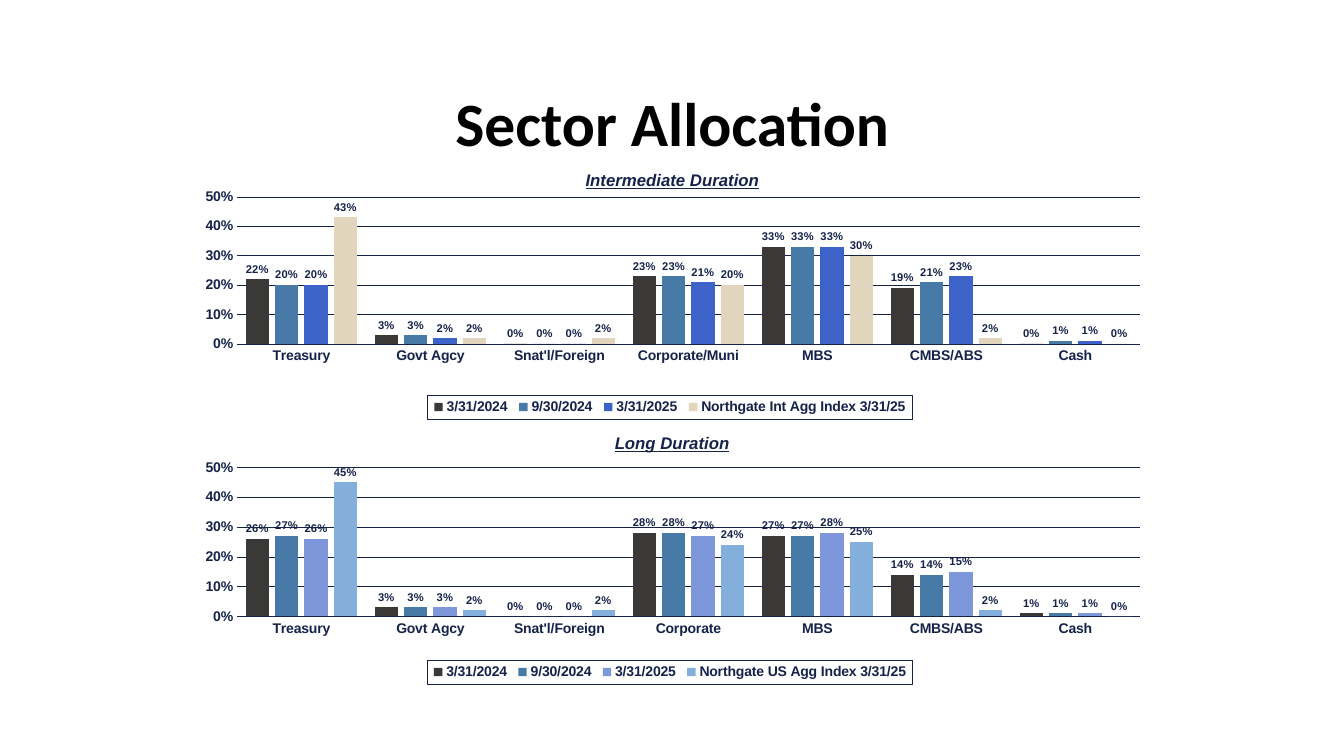
from lxml import etree
from pptx import Presentation
from pptx.chart.data import CategoryChartData
from pptx.dml.color import RGBColor
from pptx.enum.chart import XL_CHART_TYPE, XL_LABEL_POSITION, XL_LEGEND_POSITION, XL_TICK_MARK
from pptx.enum.text import MSO_ANCHOR, PP_ALIGN
from pptx.oxml import parse_xml
from pptx.oxml.ns import nsdecls, qn
from pptx.util import Inches, Pt

COLUMNS = XL_CHART_TYPE.COLUMN_CLUSTERED
OUTSIDE_END = XL_LABEL_POSITION.OUTSIDE_END
BOTTOM = XL_LEGEND_POSITION.BOTTOM
NO_TICKS = XL_TICK_MARK.NONE
MIDDLE = MSO_ANCHOR.MIDDLE
CENTER = PP_ALIGN.CENTER

BLACK = RGBColor(0x00, 0x00, 0x00)
NAVY = RGBColor(0x15, 0x23, 0x4A)
CHARCOAL = RGBColor(0x3B, 0x38, 0x38)
STEEL = RGBColor(0x48, 0x7A, 0xA8)
ROYAL = RGBColor(0x3D, 0x62, 0xC8)
SAND = RGBColor(0xE1, 0xD6, 0xBD)
PERIWINKLE = RGBColor(0x7E, 0x96, 0xDA)
SKY = RGBColor(0x84, 0xAE, 0xDC)

INTERMEDIATE = {
    "title": "Intermediate Duration",
    "title_at": (0.41, 0.06),
    "plot_top": 0.17,
    "sectors": ["Treasury", "Govt Agcy", "Snat'l/Foreign", "Corporate/Muni", "MBS", "CMBS/ABS", "Cash"],
    "holdings": [
        ("3/31/2024", CHARCOAL, (0.22, 0.03, 0, 0.23, 0.33, 0.19, 0)),
        ("9/30/2024", STEEL, (0.2, 0.03, 0, 0.23, 0.33, 0.21, 0.01)),
        ("3/31/2025", ROYAL, (0.2, 0.02, 0, 0.21, 0.33, 0.23, 0.01)),
        ("Northgate Int Agg Index 3/31/25", SAND, (0.43, 0.02, 0.02, 0.2, 0.3, 0.02, 0)),
    ],
}
LONG = {
    "title": "Long Duration",
    "title_at": (0.44, 0.06),
    "plot_top": 0.2,
    "sectors": ["Treasury", "Govt Agcy", "Snat'l/Foreign", "Corporate", "MBS", "CMBS/ABS", "Cash"],
    "holdings": [
        ("3/31/2024", CHARCOAL, (0.26, 0.03, 0, 0.28, 0.27, 0.14, 0.01)),
        ("9/30/2024", STEEL, (0.27, 0.03, 0, 0.28, 0.27, 0.14, 0.01)),
        ("3/31/2025", PERIWINKLE, (0.26, 0.03, 0, 0.27, 0.28, 0.15, 0.01)),
        ("Northgate US Agg Index 3/31/25", SKY, (0.45, 0.02, 0.02, 0.24, 0.25, 0.02, 0)),
    ],
}


def style_font(font, size, color=NAVY, name="Arial"):
    """Apply the bold text style used across the slide."""
    font.size, font.name, font.bold = Pt(size), name, True
    font.color.rgb = color


def place_part(part, index, inner=False, **fractions):
    """Give a chart part a fixed place as fractions of the chart."""
    for old_layout in part.findall(qn("c:layout")):
        part.remove(old_layout)
    layout = etree.Element(qn("c:layout"))
    manual = etree.SubElement(layout, qn("c:manualLayout"))
    settings = {"layoutTarget": "inner"} if inner else {}
    settings.update(xMode="edge", yMode="edge", **fractions)
    for tag, value in settings.items():
        etree.SubElement(manual, qn(f"c:{tag}")).set("val", str(value))
    part.insert(index, layout)


def add_heading(slide, left, top, width, height):
    """Add the slide heading."""
    frame = slide.shapes.add_textbox(left, top, width, height).text_frame
    frame.word_wrap = True
    frame.vertical_anchor = MIDDLE
    heading = frame.paragraphs[0]
    heading.text = "Sector Allocation"
    heading.alignment = CENTER
    heading.line_spacing = 0.9
    style_font(heading.font, 44, BLACK, "Calibri")


def style_title(chart, allocation):
    """Write and place the chart title."""
    chart.has_title = True
    title = chart.chart_title
    title.include_in_layout = False
    paragraph = title.text_frame.paragraphs[0]
    paragraph.text = allocation["title"]
    style_font(paragraph.font, 12)
    paragraph.font.italic = paragraph.font.underline = True
    x, y = allocation["title_at"]
    place_part(title._element, 1, x=x, y=y)


def style_axes(chart):
    """Format both axes and the gridlines."""
    sector_axis, share_axis = chart.category_axis, chart.value_axis
    for axis in (sector_axis, share_axis):
        axis.major_tick_mark = axis.minor_tick_mark = NO_TICKS
        style_font(axis.tick_labels.font, 10)
    share_axis.minimum_scale, share_axis.maximum_scale = 0, 0.5
    share_axis.major_unit = 0.1
    share_axis.tick_labels.number_format = "0%"
    share_axis.tick_labels.number_format_is_linked = False
    share_axis.format.line.fill.background()
    for line in (sector_axis.format.line, share_axis.major_gridlines.format.line):
        line.color.rgb = NAVY
        line.width = Pt(0.25)


def style_legend(chart):
    """Place the framed legend at the foot of the chart."""
    chart.has_legend = True
    legend = chart.legend
    legend.position = BOTTOM
    legend.include_in_layout = False
    style_font(legend.font, 10)
    place_part(legend._element, 1, x=0.25, y=0.91, w=0.5, h=0.09)
    frame = parse_xml(
        f'<c:spPr {nsdecls("c", "a")}><a:noFill/><a:ln w="3175"><a:solidFill>'
        f'<a:srgbClr val="{NAVY}"/></a:solidFill></a:ln></c:spPr>'
    )
    legend._element.find(qn("c:txPr")).addprevious(frame)


def style_columns(chart, holdings):
    """Colour the columns and label them with their shares."""
    plot = chart.plots[0]
    plot.gap_width, plot.overlap = 75, -25
    plot.vary_by_categories = False
    for series, (_, color, _) in zip(plot.series, holdings):
        series.format.fill.solid()
        series.format.fill.fore_color.rgb = color
        labels = series.data_labels
        labels.show_value = True
        labels.position = OUTSIDE_END
        labels.number_format = "0%"
        labels.number_format_is_linked = False
        style_font(labels.font, 8)


def add_allocation_chart(slide, allocation, left, top, width, height):
    """Add one sector allocation chart."""
    data = CategoryChartData(number_format="0%")
    data.categories = allocation["sectors"]
    for name, _, shares in allocation["holdings"]:
        data.add_series(name, shares)
    chart = slide.shapes.add_chart(COLUMNS, left, top, width, height, data).chart
    style_font(chart.font, 18)
    style_title(chart, allocation)
    style_axes(chart)
    style_legend(chart)
    style_columns(chart, allocation["holdings"])
    plot_area = chart._chartSpace.chart.plotArea
    place_part(plot_area, 0, inner=True, x=0.054, y=allocation["plot_top"], w=0.93, h=0.55)


def main():
    """Build and save the slide."""
    deck = Presentation()
    deck.slide_width, deck.slide_height = Inches(13.33), Inches(7.5)
    slide = deck.slides.add_slide(deck.slide_layouts[6])
    add_heading(slide, Inches(0.92), Inches(0.75), Inches(11.5), Inches(1.02))
    chart_left, chart_width = Inches(1.83), Inches(9.63)
    add_allocation_chart(slide, INTERMEDIATE, chart_left, Inches(1.5), chart_width, Inches(2.66))
    add_allocation_chart(slide, LONG, chart_left, Inches(4.1), chart_width, Inches(2.69))
    deck.save("out.pptx")


if __name__ == "__main__":
    main()
